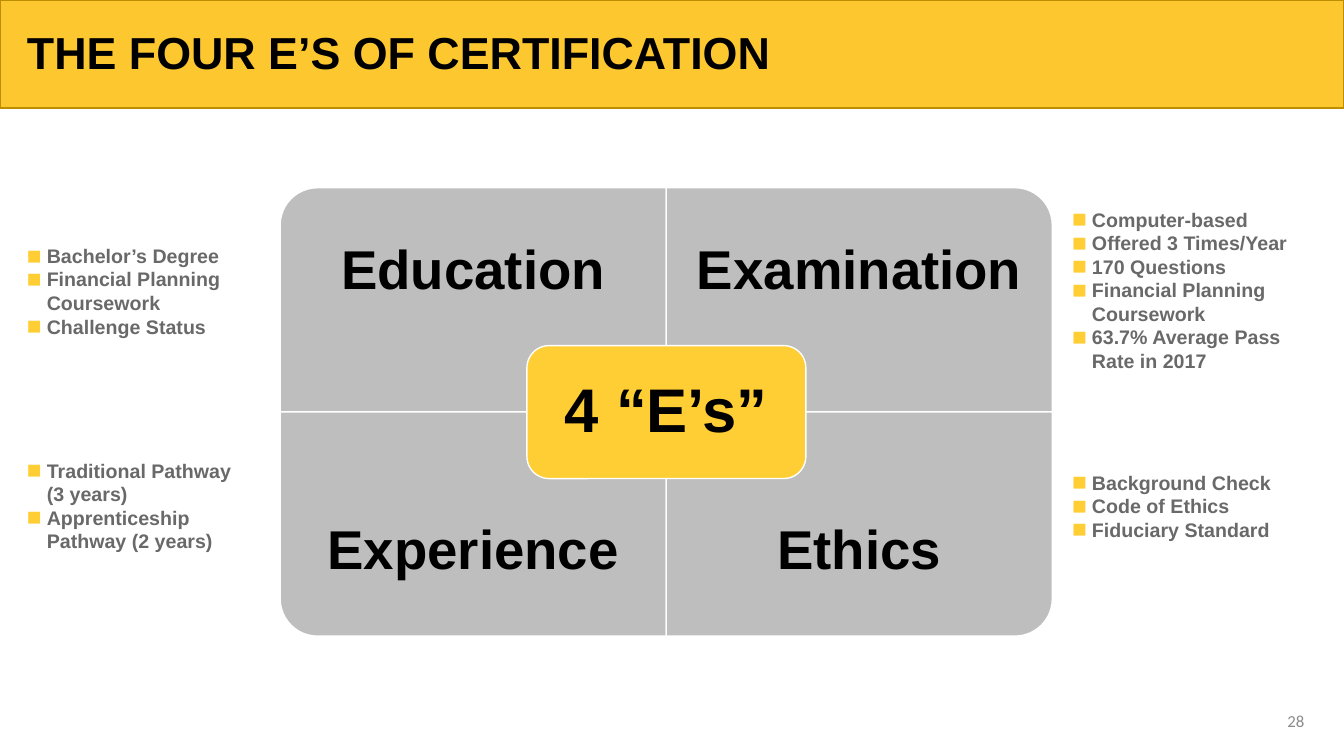
from lxml import etree
from pptx import Presentation
from pptx.dml.color import RGBColor
from pptx.enum import shapes, text
from pptx.oxml import ns
from pptx.util import Cm, Pt

BLACK = RGBColor(0x00, 0x00, 0x00)
WHITE = RGBColor(0xFF, 0xFF, 0xFF)
BANNER = RGBColor(0xFD, 0xC8, 0x2F)
BANNER_EDGE = RGBColor(0xBD, 0x8E, 0x00)
GOLD = RGBColor(0xFF, 0xCE, 0x34)
SILVER = RGBColor(0xBE, 0xBE, 0xBE)
BODY_GRAY = RGBColor(0x69, 0x69, 0x69)
NUMBER_GRAY = RGBColor(0x8C, 0x8C, 0x8C)

MATRIX_LEFT, MATRIX_TOP = 7.06, 4.73
CELL_WIDTH, CELL_HEIGHT, LABEL_HEIGHT = 9.73, 5.65, 4.24
LIST_WIDTH = 6.35

# Name, column, row, rotation that turns the round corner outwards
QUADRANTS = [
    ("Education", 0, 0, 270),
    ("Examination", 1, 0, 0),
    ("Experience", 0, 1, 180),
    ("Ethics", 1, 1, 90),
]

# Left, top, height, items
LISTS = [
    (0.43, 6.02, 2.64, ["Bachelor’s Degree", "Financial Planning Coursework",
                        "Challenge Status"]),
    (0.43, 11.43, 2.64, ["Traditional Pathway (3 years)",
                         "Apprenticeship Pathway (2 years)"]),
    (26.77, 5.11, 4.45, ["Computer-based", "Offered 3 Times/Year", "170 Questions",
                         "Financial Planning Coursework",
                         "63.7% Average Pass Rate in 2017"]),
    (26.77, 11.73, 2.06, ["Background Check", "Code of Ethics", "Fiduciary Standard"]),
]


def add_panel(page, kind, left, top, width, height, fill, edge, rotation=0):
    panel = page.shapes.add_shape(kind, Cm(left), Cm(top), Cm(width), Cm(height))
    panel.shadow.inherit = False
    panel.fill.solid()
    panel.fill.fore_color.rgb = fill
    panel.line.color.rgb = edge
    panel.line.width = Pt(1)
    panel.rotation = rotation


def add_bullet(para):
    properties = para._p.get_or_add_pPr()
    properties.set("marL", str(Cm(0.5)))
    properties.set("indent", str(-Cm(0.5)))
    color = etree.SubElement(properties, ns.qn("a:buClr"))
    etree.SubElement(color, ns.qn("a:srgbClr")).set("val", str(GOLD))
    for tag, name, value in [("a:buSzPct", "val", "125000"),
                             ("a:buFont", "typeface", "Arial"),
                             ("a:buChar", "char", "■")]:
        etree.SubElement(properties, ns.qn(tag)).set(name, value)


def add_text(page, lines, left, top, width, height, size, color=BLACK, font="Arial",
             bold=True, align=text.PP_ALIGN.LEFT, anchor=text.MSO_ANCHOR.TOP,
             spacing=None, right_inset=0.25, bullets=False):
    box = page.shapes.add_textbox(Cm(left), Cm(top), Cm(width), Cm(height))
    frame = box.text_frame
    frame.word_wrap = True
    frame.vertical_anchor = anchor
    frame.margin_right = Cm(right_inset)
    for index, line in enumerate(lines):
        para = frame.paragraphs[0] if index == 0 else frame.add_paragraph()
        para.alignment = align
        if spacing:
            para.line_spacing = spacing
        if bullets:
            add_bullet(para)
        span = para.add_run()
        span.text = line
        span.font.name = font
        span.font.size = Pt(size)
        span.font.bold = bold
        span.font.color.rgb = color


def add_label(page, name, left, top, width, height, size):
    add_text(page, [name], left, top, width, height, size, spacing=0.9,
             align=text.PP_ALIGN.CENTER, anchor=text.MSO_ANCHOR.MIDDLE)


def add_quadrant(page, name, column, row, rotation):
    left = MATRIX_LEFT + column * CELL_WIDTH
    top = MATRIX_TOP + row * CELL_HEIGHT
    # A quarter turn swaps width and height around the same centre
    width, height = CELL_WIDTH, CELL_HEIGHT
    if rotation % 180:
        width, height = height, width
    add_panel(page, shapes.MSO_SHAPE.ROUND_1_RECTANGLE,
              left + (CELL_WIDTH - width) / 2, top + (CELL_HEIGHT - height) / 2,
              width, height, SILVER, WHITE, rotation)
    label_top = top + row * (CELL_HEIGHT - LABEL_HEIGHT)
    add_label(page, name, left, label_top, CELL_WIDTH, LABEL_HEIGHT, 39)


def main():
    deck = Presentation()
    deck.slide_width, deck.slide_height = Cm(33.87), Cm(19.05)
    page = deck.slides.add_slide(deck.slide_layouts[6])

    # Title banner
    add_panel(page, shapes.MSO_SHAPE.RECTANGLE, 0, 0, 33.87, 2.72, BANNER, BANNER_EDGE)
    add_text(page, ["THE FOUR E’S OF CERTIFICATION"], 0.43, 0.66, 27.18, 1.24, 32,
             spacing=0.9)

    # Matrix with its centre
    for quadrant in QUADRANTS:
        add_quadrant(page, *quadrant)
    centre = (13.28, 8.71, 7.03, 3.35)
    add_panel(page, shapes.MSO_SHAPE.ROUNDED_RECTANGLE, *centre, GOLD, WHITE)
    add_label(page, "4 “E’s”", *centre, 44)

    # Bullet lists beside the matrix
    for left, top, height, items in LISTS:
        add_text(page, items, left, top, LIST_WIDTH, height, 14, color=BODY_GRAY,
                 right_inset=0.5, bullets=True)

    # Page number
    add_text(page, ["28"], 31.98, 17.65, 1.14, 1.02, 12, color=NUMBER_GRAY,
             font="Calibri", bold=False, align=text.PP_ALIGN.RIGHT,
             anchor=text.MSO_ANCHOR.MIDDLE)

    deck.save("out.pptx")


if __name__ == "__main__":
    main()
